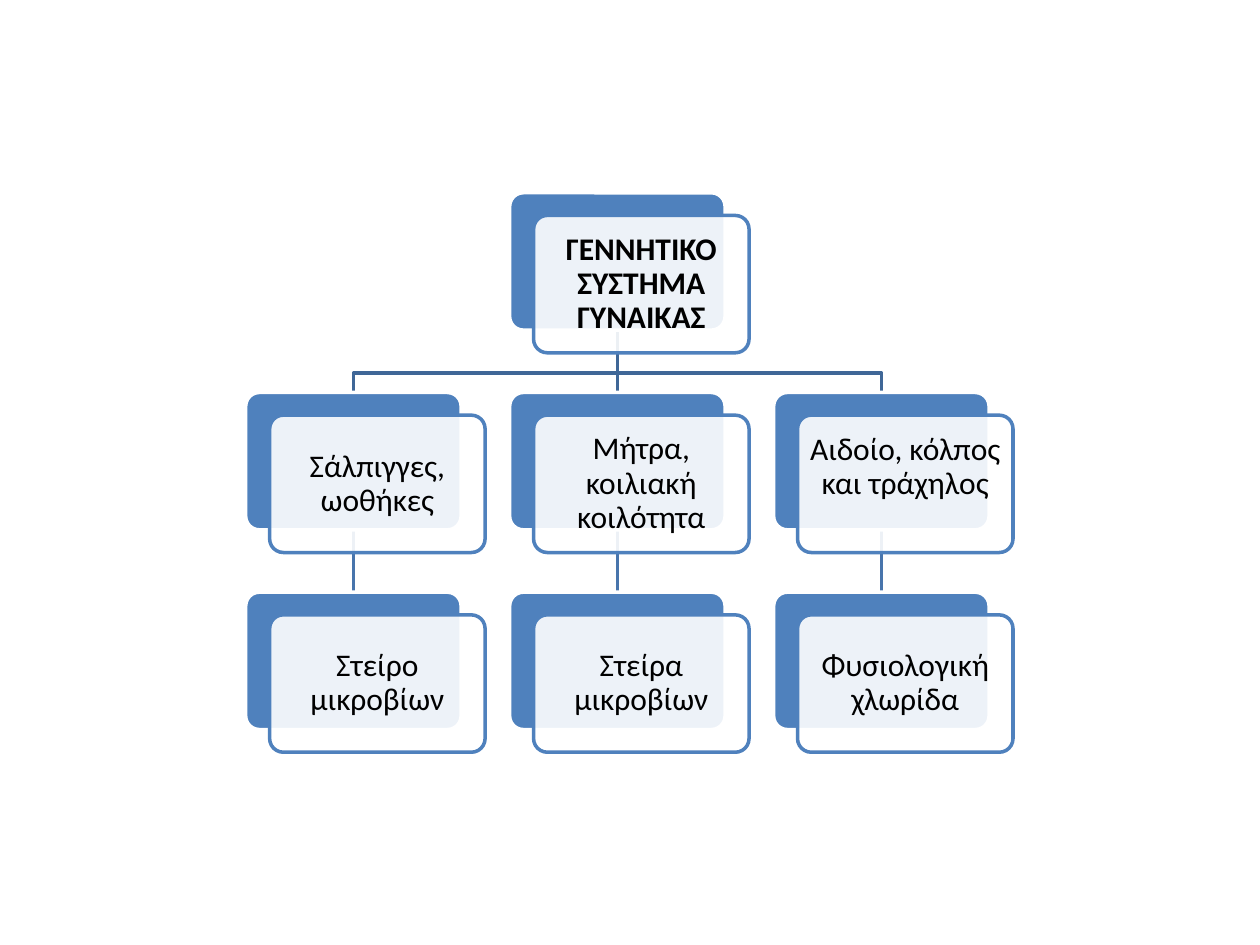
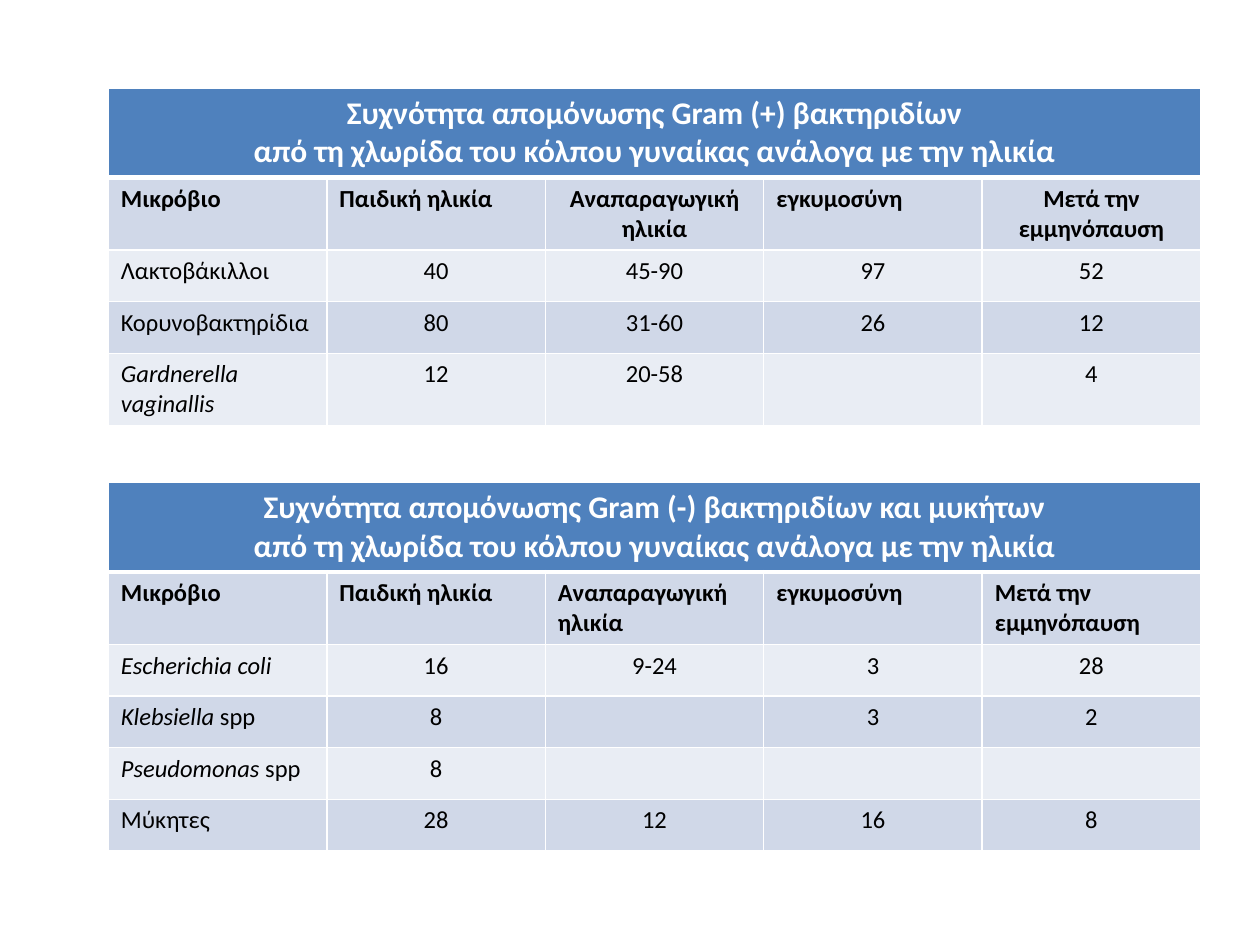
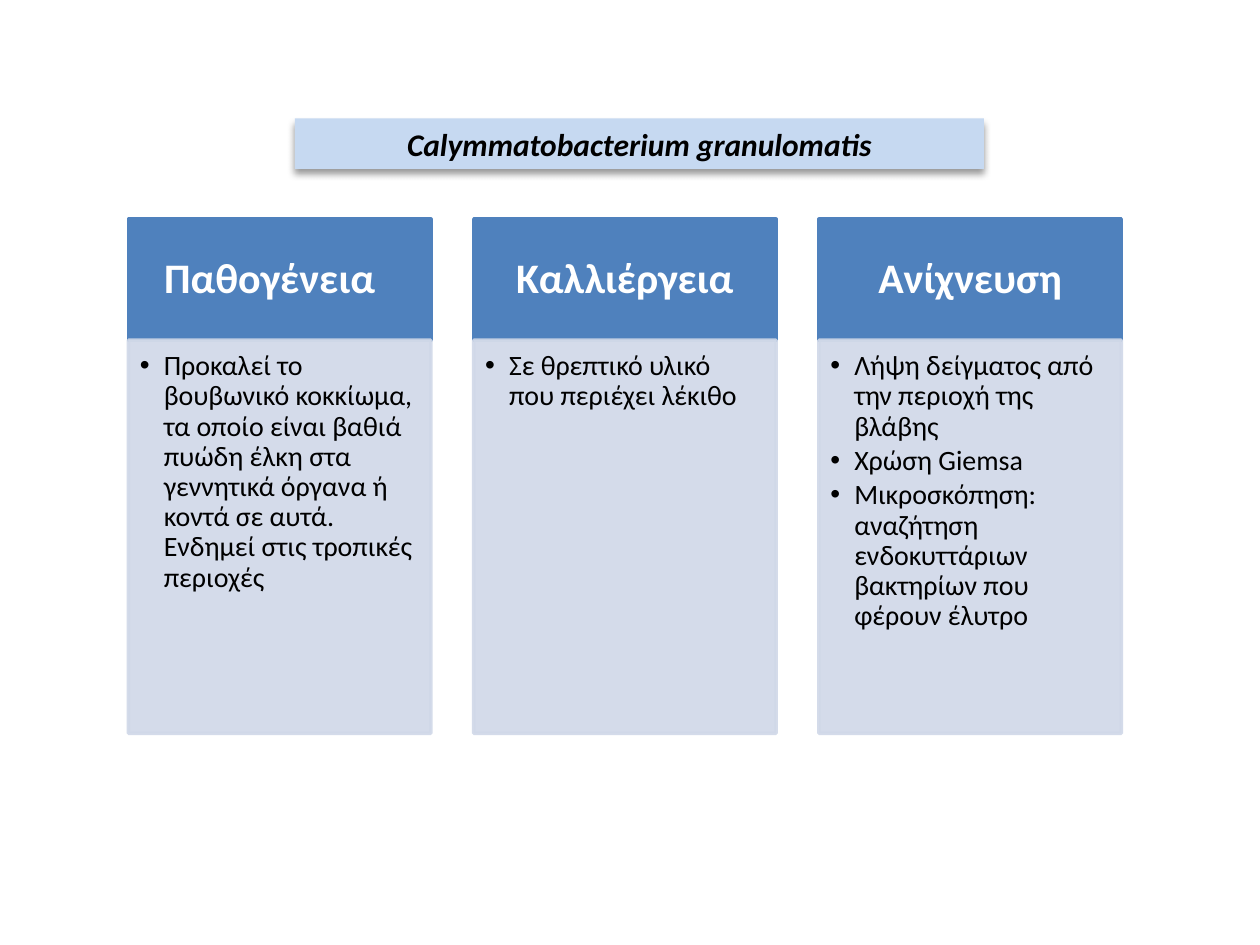
"""Three slides on the vaginal flora: an organ chart, two frequency tables and a pathogen profile."""
from lxml import etree
from pptx import Presentation
from pptx.dml.color import RGBColor
from pptx.enum.shapes import MSO_CONNECTOR as CONNECTOR, MSO_SHAPE as SHAPE
from pptx.enum.text import MSO_ANCHOR as ANCHOR, PP_ALIGN as ALIGN
from pptx.oxml.ns import qn
from pptx.util import Inches, Pt

rgb = RGBColor.from_string
BLUE, WHITE, BLACK = "4F81BD", "FFFFFF", "000000"
BAND, PALE_BAND = "D0D8E8", "E9EDF4"
FONT = "Calibri"


def add_box(slide, preset, left, top, width, height, fill, line=None, faded=None):
    """Draw a flat box; colours matching the faded XPath become 90% opaque."""
    box = slide.shapes.add_shape(preset, Inches(left), Inches(top), Inches(width), Inches(height))
    box.shadow.inherit = False
    box.fill.solid()
    box.fill.fore_color.rgb = rgb(fill)
    if line:
        box.line.color.rgb = rgb(line)
        box.line.width = Pt(2)
    else:
        box.line.fill.background()
    if faded:
        for colour in box.element.spPr.xpath(faded):
            etree.SubElement(colour, qn("a:alpha"), val="90000")
    return box


def write(frame, text, size, colour, align=ALIGN.CENTER, bold=False, italic=False, spacing=None):
    """Fill a text frame and format every run alike."""
    frame.word_wrap = True
    frame.text = text
    for paragraph in frame.paragraphs:
        paragraph.alignment = align
        paragraph.line_spacing = spacing
        for run in paragraph.runs:
            run.font.name, run.font.size = FONT, Pt(size)
            run.font.bold, run.font.italic = bold, italic
            run.font.color.rgb = rgb(colour)


prs = Presentation()
prs.slide_width, prs.slide_height = Inches(10), Inches(7.5)
blank = prs.slide_layouts[6]

organ_slide = prs.slides.add_slide(blank)
CARD_W, CARD_H = 1.71, 1.09
column_lefts = [1.95 + 2.095 * column for column in range(3)]
row_tops = [1.53 + 1.585 * row for row in range(3)]
organ_centres = [left + CARD_W / 2 for left in column_lefts]
root_x, root_bottom = organ_centres[1], row_tops[0] + CARD_H

for centre in organ_centres:
    if centre != root_x:
        branch = organ_slide.shapes.build_freeform(Inches(root_x), Inches(root_bottom))
        bends = [(root_x, 2.96), (centre, 2.96), (centre, row_tops[1])]
        branch.add_line_segments([(Inches(x), Inches(y)) for x, y in bends], close=False)
        elbow = branch.convert_to_shape()
        elbow.shadow.inherit = False
        elbow.fill.background()
        elbow.line.color.rgb = rgb("3F6797")
        elbow.line.width = Pt(2)

stems = [(root_x, root_bottom, row_tops[1], "3F6797")]
stems += [(centre, row_tops[1] + CARD_H, row_tops[2], "4875AC") for centre in organ_centres]
for x, start, end, colour in stems:
    stem = organ_slide.shapes.add_connector(
        CONNECTOR.STRAIGHT, Inches(x), Inches(start), Inches(x), Inches(end))
    stem.line.color.rgb = rgb(colour)
    stem.line.width = Pt(2)
    etree.SubElement(stem.element.spPr, qn("a:effectLst"))

organs = [
    (1, 0, "ΓΕΝΝΗΤΙΚΟ ΣΥΣΤΗΜΑ ΓΥΝΑΙΚΑΣ"),
    (0, 1, "Σάλπιγγες, ωοθήκες"),
    (0, 2, "Στείρο μικροβίων"),
    (1, 1, "Μήτρα, κοιλιακή κοιλότητα"),
    (1, 2, "Στείρα μικροβίων"),
    (2, 1, "Αιδοίο, κόλπος και τράχηλος"),
    (2, 2, "Φυσιολογική χλωρίδα"),
]
for column, row, label in organs:
    left, top = column_lefts[column], row_tops[row]
    backing = add_box(organ_slide, SHAPE.ROUNDED_RECTANGLE, left, top, CARD_W, CARD_H, BLUE, WHITE)
    card = add_box(organ_slide, SHAPE.ROUNDED_RECTANGLE, left + 0.19, top + 0.18, CARD_W, CARD_H,
                   WHITE, BLUE, "a:solidFill/a:srgbClr")
    backing.adjustments[0] = card.adjustments[0] = 0.1
    frame = card.text_frame
    frame.margin_left = frame.margin_right = frame.margin_top = Inches(0.04)
    frame.margin_bottom = Inches(0.31 if (column, row) == (2, 1) else 0.04)
    write(frame, label, 18, BLACK, bold=row == 0, spacing=0.9)

table_slide = prs.slides.add_slide(blank)
ROW_H, TABLE_W = 0.41, 8.67
ages = ["Παιδική ηλικία", "Αναπαραγωγική ηλικία", "εγκυμοσύνη", "Μετά την εμμηνόπαυση"]
frequencies = [
    (0.7, "Συχνότητα απομόνωσης Gram (+) βακτηριδίων", (2, 4), [
        ("", "Λακτοβάκιλλοι", "40", "45-90", "97", "52"),
        ("", "Κορυνοβακτηρίδια", "80", "31-60", "26", "12"),
        ("Gardnerella vaginallis", "", "12", "20-58", "", "4"),
    ]),
    (3.83, "Συχνότητα απομόνωσης Gram (-) βακτηριδίων και μυκήτων", (), [
        ("Escherichia coli", "", "16", "9-24", "3", "28"),
        ("Klebsiella", " spp", "8", "", "3", "2"),
        ("Pseudomonas", " spp", "8", "", "", ""),
        ("", "Μύκητες", "28", "12", "16", "8"),
    ]),
]
for top, heading, centred_ages, microbes in frequencies:
    row_count = len(microbes) + 2
    table = table_slide.shapes.add_table(
        row_count, 5, Inches(0.86), Inches(top), Inches(TABLE_W), Inches(ROW_H * row_count)).table
    table.horz_banding = False
    for row in range(row_count):
        for column in range(5):
            cell = table.cell(row, column)
            properties = cell._tc.get_or_add_tcPr()
            for side in ("lnL", "lnR", "lnT", "lnB"):
                thick = (row, side) in ((0, "lnB"), (1, "lnT"))
                border = etree.SubElement(properties, qn(f"a:{side}"), w=str(Pt(3 if thick else 1)))
                paint = etree.SubElement(border, qn("a:solidFill"))
                etree.SubElement(paint, qn("a:srgbClr"), val=WHITE)
            cell.fill.solid()
            cell.fill.fore_color.rgb = rgb(BLUE if row == 0 else BAND if row % 2 else PALE_BAND)
    title = table.cell(0, 0)
    title.merge(table.cell(0, 4))
    write(title.text_frame, heading + "\nαπό τη χλωρίδα του κόλπου γυναίκας ανάλογα με την ηλικία",
          18, WHITE, bold=True)
    for column, label in enumerate(["Μικρόβιο"] + ages):
        align = ALIGN.CENTER if column in centred_ages else ALIGN.LEFT
        write(table.cell(1, column).text_frame, label, 14, BLACK, align, bold=True)
    for row, (latin, plain, *rates) in enumerate(microbes, 2):
        name_frame = table.cell(row, 0).text_frame
        write(name_frame, latin or plain, 14, BLACK, ALIGN.LEFT, italic=bool(latin))
        if latin and plain:
            suffix = name_frame.paragraphs[0].add_run()
            suffix.text = plain
            suffix.font.name, suffix.font.size = FONT, Pt(14)
            suffix.font.bold = suffix.font.italic = False
            suffix.font.color.rgb = rgb(BLACK)
        for column, rate in enumerate(rates, 1):
            write(table.cell(row, column).text_frame, rate, 14, BLACK)

profile_slide = prs.slides.add_slide(blank)
species = add_box(profile_slide, SHAPE.RECTANGLE, 2.34, 0.94, 5.47, 0.4, "C6D9F1")
effects = species.element.spPr.find(qn("a:effectLst"))
shadow = etree.SubElement(effects, qn("a:outerShdw"), blurRad=str(Pt(4)), dist=str(Pt(3)),
                          dir="5400000", rotWithShape="0")
shade = etree.SubElement(shadow, qn("a:srgbClr"), val=BLACK)
etree.SubElement(shade, qn("a:alpha"), val="40000")
write(species.text_frame, "Calymmatobacterium granulomatis", 18, BLACK, bold=True, italic=True)

aspects = [
    ("Παθογένεια", 0.35, [
        "Προκαλεί το βουβωνικό κοκκίωμα, τα οποίο είναι βαθιά πυώδη έλκη στα γεννητικά όργανα "
        "ή κοντά σε αυτά. Ενδημεί στις τροπικές περιοχές"]),
    ("Καλλιέργεια", 0.19, ["Σε θρεπτικό υλικό που περιέχει λέκιθο"]),
    ("Ανίχνευση", 0.19, [
        "Λήψη δείγματος από την περιοχή της βλάβης",
        "Χρώση Giemsa",
        "Μικροσκόπηση: αναζήτηση ενδοκυττάριων βακτηρίων που φέρουν έλυτρο"]),
]
for column, (aspect, right_margin, findings) in enumerate(aspects):
    left = 1.02 + 2.74 * column
    header = add_box(profile_slide, SHAPE.RECTANGLE, left, 1.74, 2.4, 0.96, BLUE, BLUE)
    header.text_frame.margin_left = Inches(0.19)
    header.text_frame.margin_right = Inches(right_margin)
    write(header.text_frame, aspect, 24, WHITE, bold=True, spacing=0.9)

    panel = add_box(profile_slide, SHAPE.RECTANGLE, left, 2.7, 2.4, 3.12, BAND, BAND, ".//a:srgbClr")
    frame = panel.text_frame
    frame.vertical_anchor = ANCHOR.TOP
    frame.margin_left = frame.margin_top = Inches(0.09)
    frame.margin_right, frame.margin_bottom = Inches(0.12), Inches(0.14)
    write(frame, "\n".join(findings), 16, BLACK, ALIGN.LEFT, spacing=0.9)
    for finding in frame.paragraphs:
        finding.space_after = Pt(2.4)
        properties = finding._p.get_or_add_pPr()
        properties.set("marL", str(Inches(0.19)))
        properties.set("indent", str(-Inches(0.19)))
        etree.SubElement(properties, qn("a:buFont"), typeface="Arial")
        etree.SubElement(properties, qn("a:buChar"), char="•")

prs.save("out.pptx")
